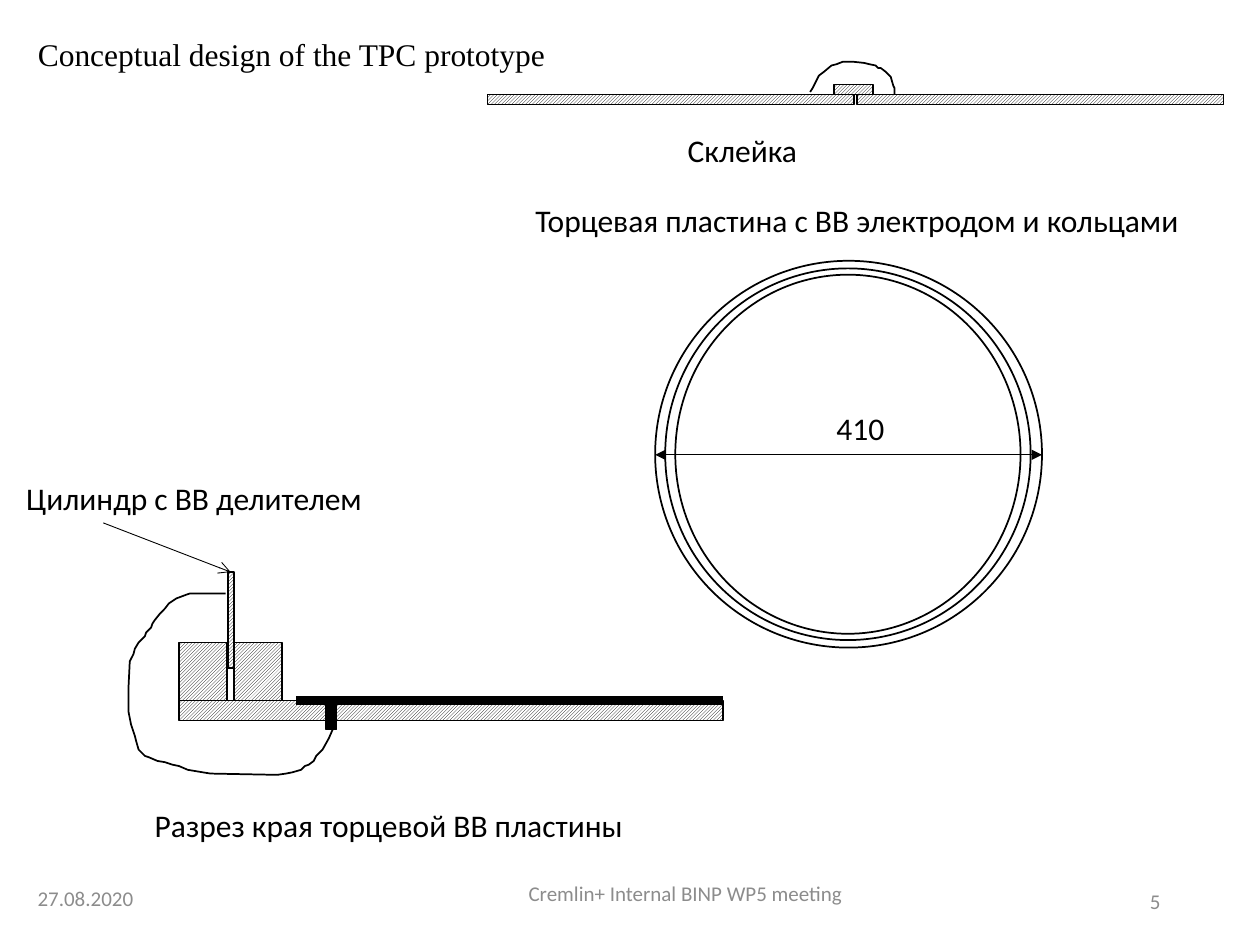
from lxml import etree
from pptx import Presentation
from pptx.dml.color import RGBColor
from pptx.enum.dml import MSO_PATTERN
from pptx.enum.shapes import MSO_CONNECTOR, MSO_SHAPE
from pptx.enum.text import MSO_ANCHOR, MSO_AUTO_SIZE, PP_ALIGN
from pptx.oxml.ns import qn
from pptx.util import Inches, Pt

RECT, OVAL = MSO_SHAPE.RECTANGLE, MSO_SHAPE.OVAL
STRAIGHT = MSO_CONNECTOR.STRAIGHT
HATCH = MSO_PATTERN.LIGHT_UPWARD_DIAGONAL
LEFT, CENTER, RIGHT = PP_ALIGN.LEFT, PP_ALIGN.CENTER, PP_ALIGN.RIGHT
TOP, MIDDLE = MSO_ANCHOR.TOP, MSO_ANCHOR.MIDDLE
FIT, FIXED = MSO_AUTO_SIZE.SHAPE_TO_FIT_TEXT, MSO_AUTO_SIZE.NONE
COLORS = {"ink": "000000", "paper": "FFFFFF", "muted": "8C8C8C"}

GLUE_WIRE = [
    (6.43, 0.73), (6.45, 0.7), (6.47, 0.66), (6.49, 0.62), (6.5, 0.6),
    (6.54, 0.57), (6.6, 0.52), (6.64, 0.51), (6.69, 0.49), (6.77, 0.49),
    (6.86, 0.5), (6.9, 0.51), (6.95, 0.52), (6.97, 0.54), (6.99, 0.54),
    (7.03, 0.57), (7.05, 0.59), (7.07, 0.61), (7.09, 0.68), (7.1, 0.7),
    (7.1, 0.75),
]
EDGE_WIRE = [
    (2.64, 5.79), (2.61, 5.86), (2.56, 5.95), (2.53, 5.98), (2.51, 6),
    (2.49, 6.04), (2.45, 6.07), (2.42, 6.08), (2.39, 6.11), (2.32, 6.13),
    (2.27, 6.14), (2.2, 6.15), (1.67, 6.14), (1.61, 6.13), (1.49, 6.11),
    (1.42, 6.08), (1.37, 6.07), (1.31, 6.05), (1.25, 6.04), (1.18, 6.01),
    (1.15, 6), (1.1, 5.95), (1.08, 5.88), (1.07, 5.84), (1.06, 5.81),
    (1.04, 5.75), (1.02, 5.65), (1.02, 5.45), (1.03, 5.25), (1.06, 5.19),
    (1.07, 5.15), (1.1, 5.1), (1.15, 5.05), (1.16, 5.02), (1.2, 4.98),
    (1.21, 4.95), (1.23, 4.92), (1.27, 4.87), (1.31, 4.83), (1.34, 4.79),
    (1.4, 4.75), (1.48, 4.72), (1.51, 4.71), (1.79, 4.71),
]


def paint(name):
    return RGBColor.from_string(COLORS[name])


def place(shape, box):
    shape.left, shape.top, shape.width, shape.height = map(Inches, box)


def write(shape, text, size=18, font="Calibri", color="ink", align=LEFT,
          anchor=TOP, wrap=False, fit=FIT):
    frame = shape.text_frame
    frame.text = text
    frame.word_wrap = wrap
    frame.auto_size = fit
    frame.vertical_anchor = anchor
    para = frame.paragraphs[0]
    para.alignment = align
    para.font.size = Pt(size)
    para.font.name = font
    para.font.color.rgb = paint(color)


def add_text(slide, box, text, **style):
    write(slide.shapes.add_textbox(*map(Inches, box)), text, **style)


def outline(shape, width=1):
    shape.line.color.rgb = paint("ink")
    shape.line.width = Pt(width)


def add_shape(slide, kind, box):
    shape = slide.shapes.add_shape(kind, *map(Inches, box))
    shape.shadow.inherit = False
    outline(shape)
    return shape


def add_plate(slide, box):
    fill = add_shape(slide, RECT, box).fill
    fill.patterned()
    fill.pattern = HATCH
    fill.fore_color.rgb = paint("ink")
    fill.back_color.rgb = paint("paper")


def add_ring(slide, box):
    add_shape(slide, OVAL, box).fill.background()


def add_pin(slide, box):
    fill = add_shape(slide, RECT, box).fill
    fill.solid()
    fill.fore_color.rgb = paint("ink")


def add_wire(slide, points):
    points = [(Inches(x), Inches(y)) for x, y in points]
    pen = slide.shapes.build_freeform(*points[0])
    pen.add_line_segments(points[1:], close=False)
    shape = pen.convert_to_shape()
    shape.shadow.inherit = False
    shape.fill.background()
    outline(shape)


def add_line(slide, start, end, width=0.5, head=None, tail=None):
    line = slide.shapes.add_connector(STRAIGHT, *map(Inches, start + end))
    outline(line, width)
    props = line._element.spPr
    stroke = props.find(qn("a:ln"))
    for tag, kind in (("a:headEnd", head), ("a:tailEnd", tail)):
        if kind:
            etree.SubElement(stroke, qn(tag), type=kind)
    etree.SubElement(props, qn("a:effectLst"))


def add_footer(slide):
    for box, text, align in (
        ((0.2, 6.93, 2.25, 0.4), "27.08.2020", LEFT),
        ((3.75, 6.89, 3.38, 0.4), "Cremlin+ Internal BINP WP5 meeting", CENTER),
        ((7.06, 6.95, 2.25, 0.4), "5", RIGHT),
    ):
        add_text(slide, box, text, size=12, color="muted", align=align,
                 anchor=MIDDLE, wrap=True, fit=FIXED)


def draw_joint(slide):
    for box in ((3.87, 0.75, 2.91, 0.08), (6.8, 0.75, 2.91, 0.08),
                (6.62, 0.67, 0.31, 0.08)):
        add_plate(slide, box)
    add_wire(slide, GLUE_WIRE)
    add_text(slide, (5.36, 0.99, 1.08, 0.4), "Склейка")


def draw_rings(slide):
    for box in ((5.2, 2.07, 3.07, 3.07), (5.28, 2.13, 2.9, 2.95),
                (5.36, 2.18, 2.74, 2.85)):
        add_ring(slide, box)
    add_text(slide, (4.15, 1.55, 5.36, 0.4),
             "Торцевая пластина с ВВ электродом и кольцами")
    add_line(slide, (5.2, 3.61), (8.27, 3.61), head="triangle", tail="triangle")
    add_text(slide, (6.54, 3.2, 0.59, 0.4), "410")


def draw_edge(slide):
    for box in ((1.42, 5.56, 4.32, 0.16), (1.42, 5.1, 0.38, 0.46),
                (1.86, 5.1, 0.38, 0.46)):
        add_plate(slide, box)
    add_line(slide, (2.35, 5.56), (5.74, 5.56), width=5)
    add_plate(slide, (1.81, 4.54, 0.05, 0.76))
    add_pin(slide, (2.59, 5.55, 0.08, 0.24))
    add_wire(slide, EDGE_WIRE)
    add_text(slide, (1.13, 6.35, 3.96, 0.4), "Разрез края торцевой ВВ пластины")
    add_text(slide, (0.11, 3.75, 2.89, 0.4), "Цилиндр с ВВ делителем")
    add_line(slide, (0.82, 4.15), (1.83, 4.54), tail="arrow")


def main():
    deck = Presentation()
    deck.slide_width, deck.slide_height = Inches(10), Inches(7.5)
    slide = deck.slides.add_slide(deck.slide_layouts[5])
    title = slide.shapes.title
    place(title, (0.2, 0.23, 4.27, 0.4))
    write(title, "Conceptual design of the TPC prototype", font="Times New Roman")
    add_footer(slide)
    draw_joint(slide)
    draw_rings(slide)
    draw_edge(slide)
    deck.save("out.pptx")


if __name__ == "__main__":
    main()
